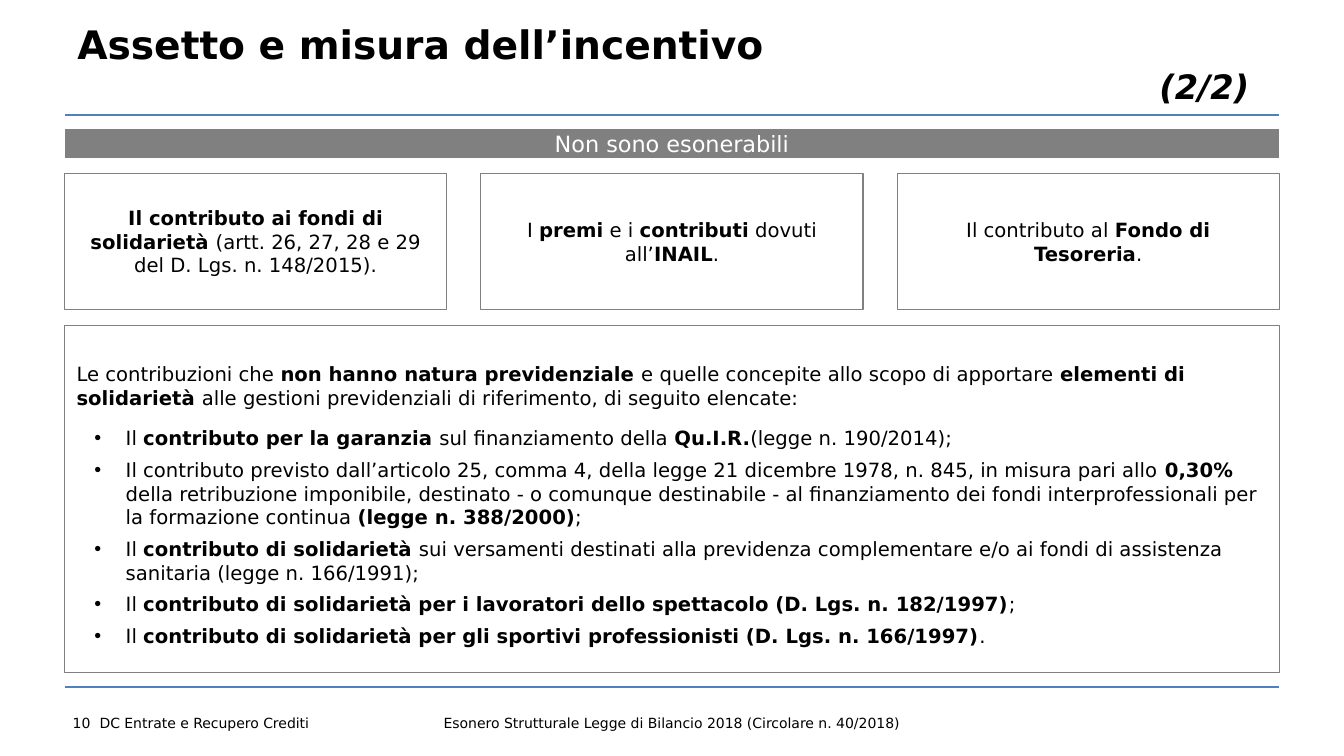
from lxml import etree
from pptx import Presentation
from pptx.dml.color import RGBColor
from pptx.enum.shapes import MSO_CONNECTOR, MSO_SHAPE
from pptx.enum.text import MSO_ANCHOR, MSO_AUTO_SIZE, PP_ALIGN
from pptx.oxml.ns import qn
from pptx.util import Cm, Pt

LEFT, CENTER = PP_ALIGN.LEFT, PP_ALIGN.CENTER
TOP, MIDDLE = MSO_ANCHOR.TOP, MSO_ANCHOR.MIDDLE
NO_AUTOFIT = MSO_AUTO_SIZE.NONE
RECTANGLE, STRAIGHT = MSO_SHAPE.RECTANGLE, MSO_CONNECTOR.STRAIGHT

BLACK = RGBColor(0x00, 0x00, 0x00)
WHITE = RGBColor(0xFF, 0xFF, 0xFF)
GREY = RGBColor(0x80, 0x80, 0x80)
BLUE = RGBColor(0x4F, 0x81, 0xBD)
FONT = "DejaVu Sans"

# Content column, in centimetres
X, WIDTH = 1.63, 30.61
CARD_WIDTH = 9.63
CARD_STEP = (WIDTH - CARD_WIDTH) / 2

# Bold passages stand between double asterisks
CARDS = [
    "**Il contributo ai fondi di solidarietà **(artt. 26, 27, 28 e 29 del D. Lgs. n. 148/2015).",
    "I **premi** e i **contributi** dovuti all’**INAIL**.",
    "Il contributo al **Fondo di Tesoreria**.",
]
INTRO = (
    "Le contribuzioni che **non hanno natura previdenziale **e quelle concepite allo scopo "
    "di apportare **elementi di solidarietà **alle gestioni previdenziali di riferimento, "
    "di seguito elencate:"
)
CONTRIBUTIONS = [
    "Il **contributo per la garanzia **sul finanziamento della **Qu.I.R.**(legge n. 190/2014);",
    "Il contributo previsto dall’articolo 25, comma 4, della legge 21 dicembre 1978, n. 845, "
    "in misura pari allo **0,30%** della retribuzione imponibile, destinato - o comunque "
    "destinabile - al finanziamento dei fondi interprofessionali per la formazione continua "
    "**(legge n. 388/2000)**;",
    "Il **contributo di solidarietà **sui versamenti destinati alla previdenza complementare "
    "e/o ai fondi di assistenza sanitaria (legge n. 166/1991);",
    "Il **contributo di solidarietà per i lavoratori dello spettacolo (D. Lgs. n. 182/1997)**;",
    "Il **contributo di solidarietà per gli sportivi professionisti (D. Lgs. n. 166/1997)**.",
]


def set_frame(tf, anchor, insets):
    tf.word_wrap = True
    tf.auto_size = NO_AUTOFIT
    tf.vertical_anchor = anchor
    tf.margin_left, tf.margin_top, tf.margin_right, tf.margin_bottom = map(Cm, insets)


def add_runs(p, text, size, color=BLACK, align=LEFT, italic=False):
    p.alignment = align
    for i, part in enumerate(text.split("**")):
        if part:
            r = p.add_run()
            r.text = part
            r.font.name = FONT
            r.font.size = Pt(size)
            r.font.bold = i % 2 == 1
            r.font.italic = italic
            r.font.color.rgb = color


def add_bullet(p):
    pPr = p._p.get_or_add_pPr()
    pPr.set("marL", str(Cm(1.24)))
    pPr.set("indent", str(Cm(-0.79)))
    etree.SubElement(pPr, qn("a:buFont")).set("typeface", "Arial")
    etree.SubElement(pPr, qn("a:buChar")).set("char", "•")


def add_rule(s, y):
    line = s.shapes.add_connector(STRAIGHT, Cm(X), Cm(y), Cm(X + WIDTH), Cm(y))
    line.line.color.rgb = BLUE
    line.line.width = Pt(1.5)
    etree.SubElement(line._element.spPr, qn("a:effectLst"))


def add_box(s, x, y, w, h, insets, fill=WHITE, border=GREY):
    sp = s.shapes.add_shape(RECTANGLE, Cm(x), Cm(y), Cm(w), Cm(h))
    sp.shadow.inherit = False
    sp.fill.solid()
    sp.fill.fore_color.rgb = fill
    sp.line.color.rgb = border
    sp.line.width = Pt(0.75)
    set_frame(sp.text_frame, MIDDLE, insets)
    return sp.text_frame


def add_label(s, x, y, w, h, text, size, align=CENTER, anchor=MIDDLE,
              insets=(0.1, 0.1, 0.1, 0.1), italic=False):
    tf = s.shapes.add_textbox(Cm(x), Cm(y), Cm(w), Cm(h)).text_frame
    set_frame(tf, anchor, insets)
    add_runs(tf.paragraphs[0], text, size, align=align, italic=italic)
    return tf.paragraphs[0]


def add_title(s):
    title = s.shapes.title
    title.left, title.top, title.width, title.height = Cm(1.7), Cm(0.56), Cm(30.5), Cm(2.34)
    set_frame(title.text_frame, TOP, (0.25, 0.13, 0.25, 0.13))
    p = title.text_frame.paragraphs[0]
    p.line_spacing = 0.85
    add_runs(p, "**Assetto e misura dell’incentivo**", 28)
    part = add_label(s, 28.6, 1.68, 3.5, 1, "**(2/2)**", 24, anchor=TOP,
                     insets=(0.25, 0.13, 0.25, 0.13), italic=True)
    part.line_spacing = 0.85


def add_contributions(s):
    tf = add_box(s, X, 8.2, WIDTH, 8.74, (0.3, 0.41, 0.3, 0.1))
    p = tf.paragraphs[0]
    p.space_after = Pt(6)
    add_runs(p, INTRO, 14)
    for i, text in enumerate(CONTRIBUTIONS):
        p = tf.add_paragraph()
        add_bullet(p)
        p.space_before = Pt(0 if i else 6)
        p.space_after = Pt(6)
        add_runs(p, text, 14)


def main():
    prs = Presentation()
    prs.slide_width, prs.slide_height = Cm(33.87), Cm(19.05)
    s = prs.slides.add_slide(prs.slide_layouts[5])

    # Title and rules
    add_title(s)
    for y in (2.9, 17.32):
        add_rule(s, y)

    # Heading band
    tf = add_box(s, X, 3.23, WIDTH, 0.76, (0.1, 0.1, 0.1, 0.1), GREY, WHITE)
    add_runs(tf.paragraphs[0], "Non sono esonerabili", 16, WHITE, CENTER)

    # Three cards
    for i, text in enumerate(CARDS):
        tf = add_box(s, X + i * CARD_STEP, 4.37, CARD_WIDTH, 3.43, (0.3, 0.1, 0.3, 0.1))
        add_runs(tf.paragraphs[0], text, 14, align=CENTER)

    # List of contributions
    add_contributions(s)

    # Footer
    add_label(s, 1.7, 17.75, 0.71, 0.91, "10", 10, insets=(0, 0, 0, 0))
    add_label(s, 2.41, 17.91, 7.8, 0.61, "DC Entrate e Recupero Crediti", 10, LEFT)
    add_label(s, 10.92, 17.91, 12.01, 0.61,
              "Esonero Strutturale Legge di Bilancio 2018 (Circolare n. 40/2018)", 10)

    prs.save("out.pptx")


if __name__ == "__main__":
    main()
